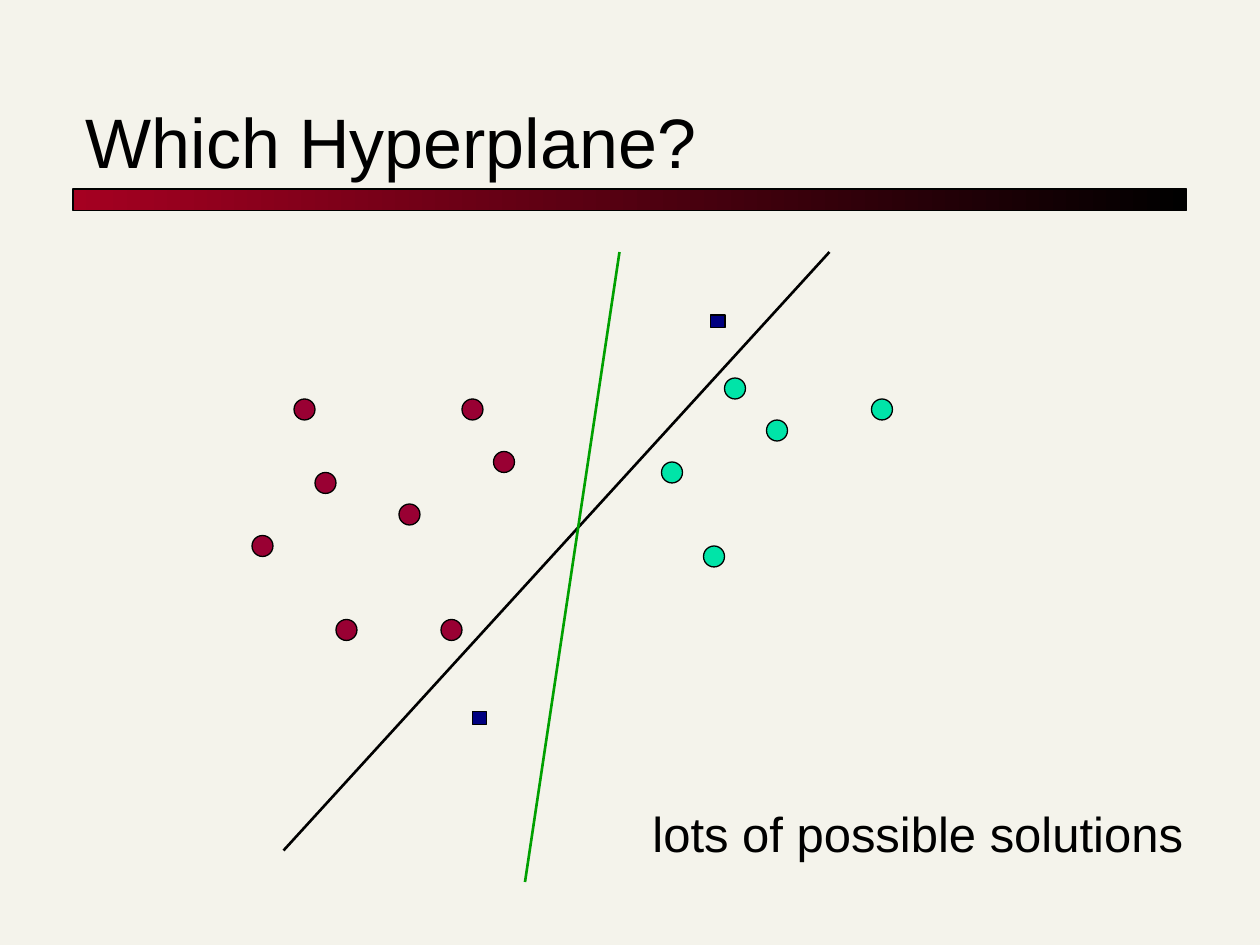
from pptx import Presentation
from pptx.dml.color import RGBColor
from pptx.enum.shapes import MSO_CONNECTOR, MSO_SHAPE
from pptx.enum.text import MSO_ANCHOR, MSO_AUTO_SIZE, PP_ALIGN
from pptx.oxml.ns import qn
from pptx.util import Inches, Pt
from lxml.etree import SubElement

COLORS = {"paper": "F4F3EB", "ink": "000000", "bar": "A50021", "red": "990033",
          "teal": "00E4A8", "navy": "000080", "green": "00A000"}
CELL = 1 / 12  # grid step of the plot, in inches
DOT = (2, 2)   # marker sizes in grid steps
SQUARE = (1.36, 1.2)

# Plot data as (column, row) of the grid
RED_POINTS = [(28, 38), (30, 45), (32, 59), (44, 38), (24, 51), (38, 48), (47, 43), (42, 59)]
TEAL_POINTS = [(63, 44), (67, 52), (69, 36), (83, 38), (73, 40)]
NAVY_POINTS = [(45, 67.8), (67.7, 30)]
HYPERPLANES = [((27, 81), (79, 24), "ink"), ((50, 84), (59, 24), "green")]


def color(name):
    return RGBColor.from_string(COLORS[name])


def grid(*steps):
    return [Inches(n * CELL) for n in steps]


def outline(s, name, width):
    s.line.color.rgb = color(name)
    s.line.width = Pt(width)


def set_text(s, text, size, **frame):
    tf = s.text_frame
    for key, value in frame.items():
        setattr(tf, key, value)
    p = tf.paragraphs[0]
    p.alignment = PP_ALIGN.LEFT
    r = p.add_run()
    r.text = text
    for key, value in {"name": "Arial", "size": Pt(size)}.items():
        setattr(r.font, key, value)
    r.font.color.rgb = color("ink")
    return p


def add_title(slide, text):
    s = slide.shapes.title
    s.left, s.top, s.width, s.height = map(Inches, (0.58, 0.42, 8.83, 1.08))
    set_text(s, text, 40, vertical_anchor=MSO_ANCHOR.BOTTOM,
             auto_size=MSO_AUTO_SIZE.NONE, word_wrap=True)


def add_bar(slide):
    s = slide.shapes.add_shape(MSO_SHAPE.RECTANGLE, *map(Inches, (0.58, 1.5, 8.84, 0.17)))
    s.shadow.inherit = False
    s.fill.gradient()
    s.fill.gradient_angle = 0
    for stop, name, position in zip(s.fill.gradient_stops, ("bar", "ink"), (0, 1)):
        stop.color.rgb = color(name)
        stop.position = position
    outline(s, "ink", 0.75)


def add_markers(slide, kind, points, size, fill):
    for point in points:
        s = slide.shapes.add_shape(kind, *grid(*point, *size))
        s.shadow.inherit = False
        s.fill.solid()
        s.fill.fore_color.rgb = color(fill)
        outline(s, "ink", 0.75)


def add_hyperplane(slide, start, end, name):
    s = slide.shapes.add_connector(MSO_CONNECTOR.STRAIGHT, *grid(*start, *end))
    outline(s, name, 1.5)
    SubElement(s._element.spPr, qn("a:effectLst"))


def add_caption(slide, text):
    s = slide.shapes.add_textbox(*map(Inches, (5.08, 6.33, 4.92, 0.57)))
    p = set_text(s, text, 28, word_wrap=True, auto_size=MSO_AUTO_SIZE.SHAPE_TO_FIT_TEXT)
    p.space_before = Pt(3)


def main():
    prs = Presentation()
    prs.slide_width, prs.slide_height = Inches(10), Inches(7.5)
    slide = prs.slides.add_slide(prs.slide_layouts[5])
    slide.background.fill.solid()
    slide.background.fill.fore_color.rgb = color("paper")

    # Heading
    add_bar(slide)
    add_title(slide, "Which Hyperplane?")

    # Two classes and the lines that separate them
    add_markers(slide, MSO_SHAPE.OVAL, RED_POINTS, DOT, "red")
    add_markers(slide, MSO_SHAPE.OVAL, TEAL_POINTS, DOT, "teal")
    for start, end, name in HYPERPLANES:
        add_hyperplane(slide, start, end, name)

    # Caption and extra points
    add_caption(slide, "lots of possible solutions")
    add_markers(slide, MSO_SHAPE.RECTANGLE, NAVY_POINTS, SQUARE, "navy")

    prs.save("out.pptx")


if __name__ == "__main__":
    main()
